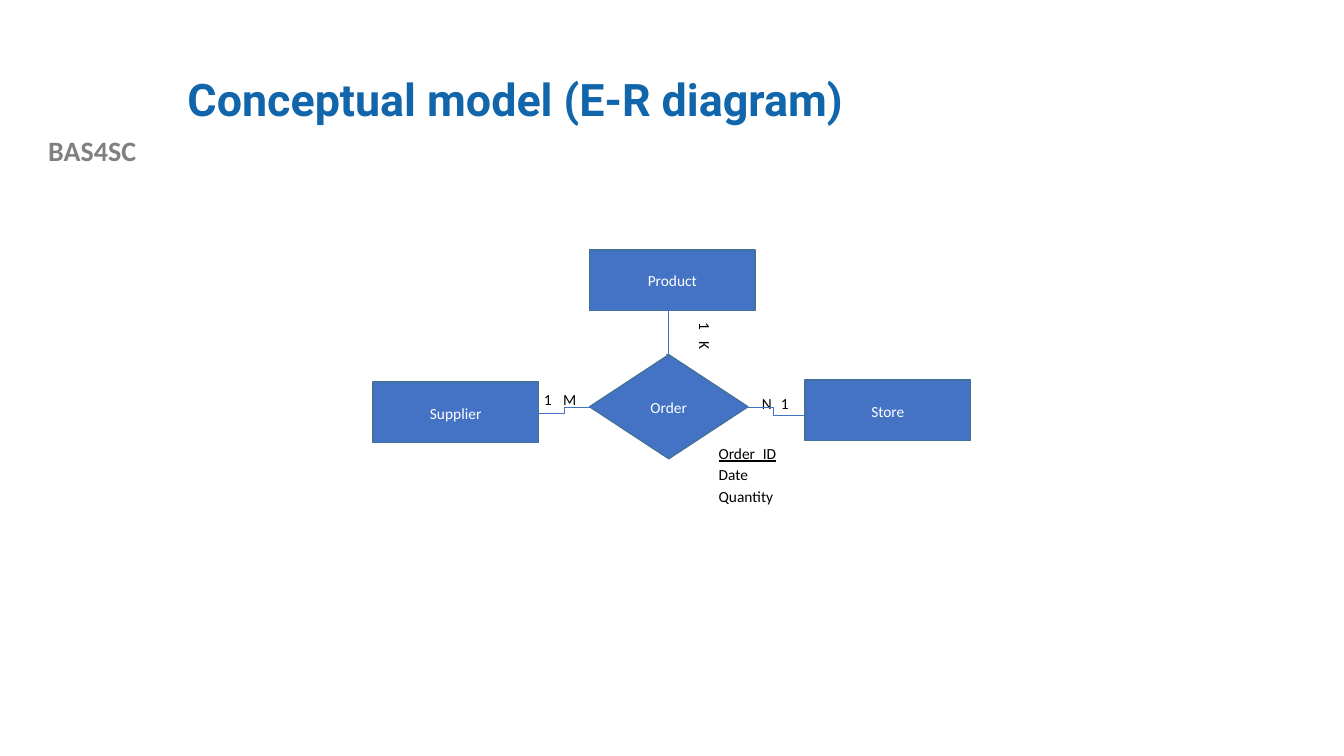
from lxml.etree import SubElement
from pptx import Presentation
from pptx.dml.color import RGBColor
from pptx.enum.shapes import MSO_CONNECTOR, MSO_SHAPE as SHAPE
from pptx.enum.text import MSO_ANCHOR as ANCHOR, MSO_AUTO_SIZE, PP_ALIGN as ALIGN
from pptx.oxml.ns import qn
from pptx.util import Cm, Pt

WHITE = RGBColor(0xFF, 0xFF, 0xFF)
BLACK = RGBColor(0, 0, 0)
GRAY = RGBColor(0x80, 0x80, 0x80)
TITLE_BLUE = RGBColor(0x10, 0x65, 0xAB)
NODE_BLUE = RGBColor(0x44, 0x72, 0xC4)
EDGE_BLUE = RGBColor(0x42, 0x71, 0x9B)

TITLE = "Conceptual model (E-R diagram)"
PROJECT = "BAS4SC"
ENTITY_SIZE = (4.17, 1.52)
ENTITIES = [("Supplier", 9.4, 9.63), ("Store", 20.29, 9.58), ("Product", 14.86, 6.3)]
RELATION = ("Order", 14.86, 8.94, 3.99, 2.62)
LABELS = [
    ("N\t1", 18.95, 9.73, 1.35, 0.79, 0),
    ("1\tM", 13.46, 9.63, 1.42, 0.79, 0),
    ("1\tK", 17.17, 8.15, 1.3, 0.76, 90),
    ("Order_ID\nDate\nQuantity", 17.86, 11, 2.36, 1.75, 0),
]
LINKS = [
    (13.54, 10.41, 14.91, 10.26),
    (18.64, 10.26, 20.32, 10.46),
    (16.92, 7.82, 16.79, 8.94),
]
LABEL_TAB = Cm(0.48)


def style(p, size, color, font="Calibri", bold=False):
    for r in p.runs:
        r.font.name = font
        r.font.size = Pt(size)
        r.font.bold = bold
        r.font.color.rgb = color


def add_box(s, kind, text, box, fill, color, align, anchor, spacing):
    sp = s.shapes.add_shape(kind, *map(Cm, box))
    sp.shadow.inherit = False
    sp.fill.solid()
    sp.fill.fore_color.rgb = fill
    sp.line.fill.background()
    tf = sp.text_frame
    tf.word_wrap = True
    tf.vertical_anchor = anchor
    tf.text = text
    for p in tf.paragraphs:
        p.alignment = align
        p.line_spacing = spacing
        style(p, 11, color)
    return sp


def add_node(s, kind, text, *box):
    sp = add_box(s, kind, text, box, NODE_BLUE, WHITE, ALIGN.CENTER, ANCHOR.MIDDLE, 1.07)
    sp.line.color.rgb = EDGE_BLUE
    sp.line.width = Pt(1)


def add_label(s, text, *box, rotation):
    sp = add_box(s, SHAPE.RECTANGLE, text, box, WHITE, BLACK, ALIGN.LEFT, ANCHOR.TOP, 1.15)
    sp.rotation = rotation
    p = sp.text_frame.paragraphs[0]
    if "\t" in text:
        tabs = SubElement(p._p.get_or_add_pPr(), qn("a:tabLst"))
        SubElement(tabs, qn("a:tab"), pos=str(LABEL_TAB), algn="l")
    else:
        p.runs[0].font.underline = True


def add_link(s, *ends):
    link = s.shapes.add_connector(MSO_CONNECTOR.ELBOW, *map(Cm, ends))
    link.line.color.rgb = NODE_BLUE
    link.line.width = Pt(0.5)
    SubElement(link._element.spPr, qn("a:effectLst"))


def main():
    prs = Presentation()
    prs.slide_width, prs.slide_height = Cm(33.87), Cm(19.05)
    s = prs.slides.add_slide(prs.slide_layouts[5])

    title = s.shapes.title
    title.left, title.top, title.width, title.height = map(Cm, (4.47, 1.02, 27.08, 3.1))
    tf = title.text_frame
    tf.text = TITLE
    tf.auto_size = MSO_AUTO_SIZE.NONE
    tf.vertical_anchor = ANCHOR.MIDDLE
    p = tf.paragraphs[0]
    p.alignment = ALIGN.LEFT
    p.line_spacing = 0.9
    style(p, 32, TITLE_BLUE, "Roboto", True)

    tf = s.shapes.add_textbox(*map(Cm, (0, 3.25, 4.65, 1.09))).text_frame
    tf.word_wrap = True
    tf.text = PROJECT
    p = tf.paragraphs[0]
    p.alignment = ALIGN.CENTER
    style(p, 20, GRAY, bold=True)

    for text, *box, rotation in LABELS:
        add_label(s, text, *box, rotation=rotation)
    add_node(s, SHAPE.FLOWCHART_DECISION, *RELATION)
    for name, x, y in ENTITIES:
        add_node(s, SHAPE.FLOWCHART_PROCESS, name, x, y, *ENTITY_SIZE)
    for ends in LINKS:
        add_link(s, *ends)

    prs.save("out.pptx")


if __name__ == "__main__":
    main()
